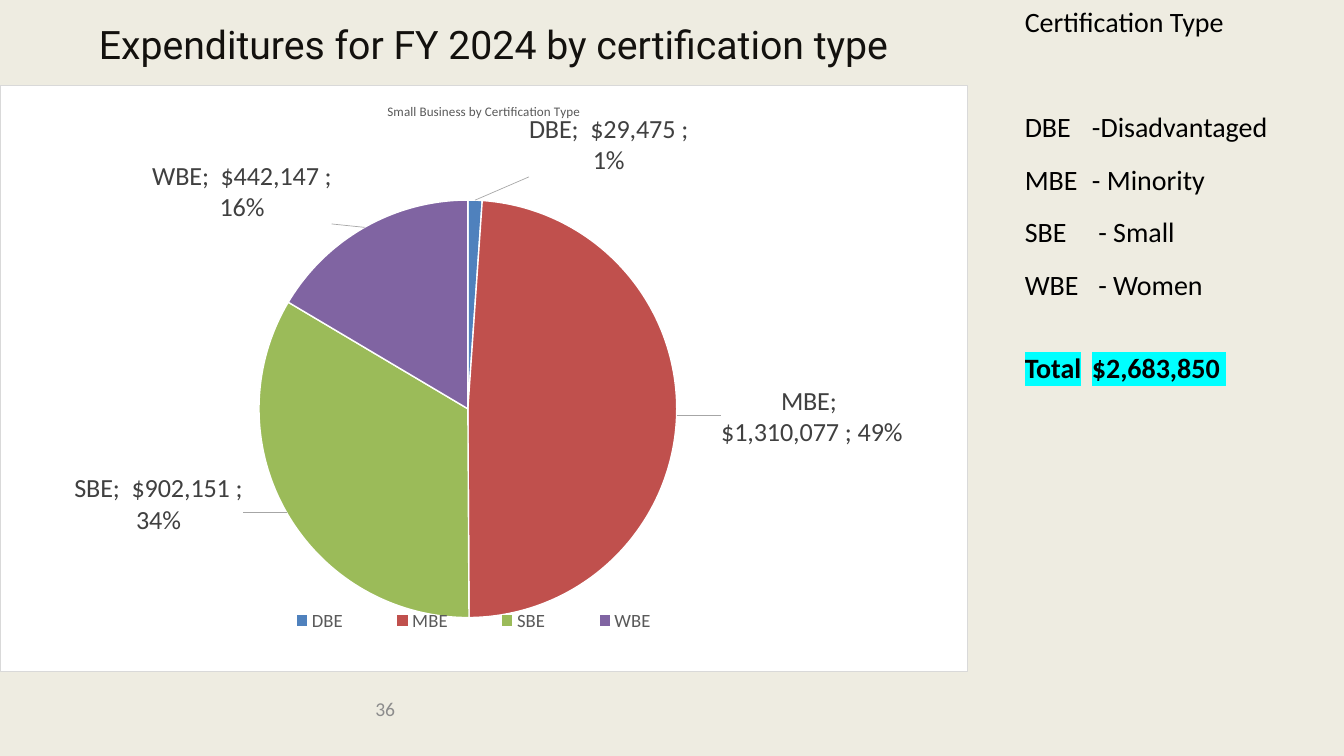
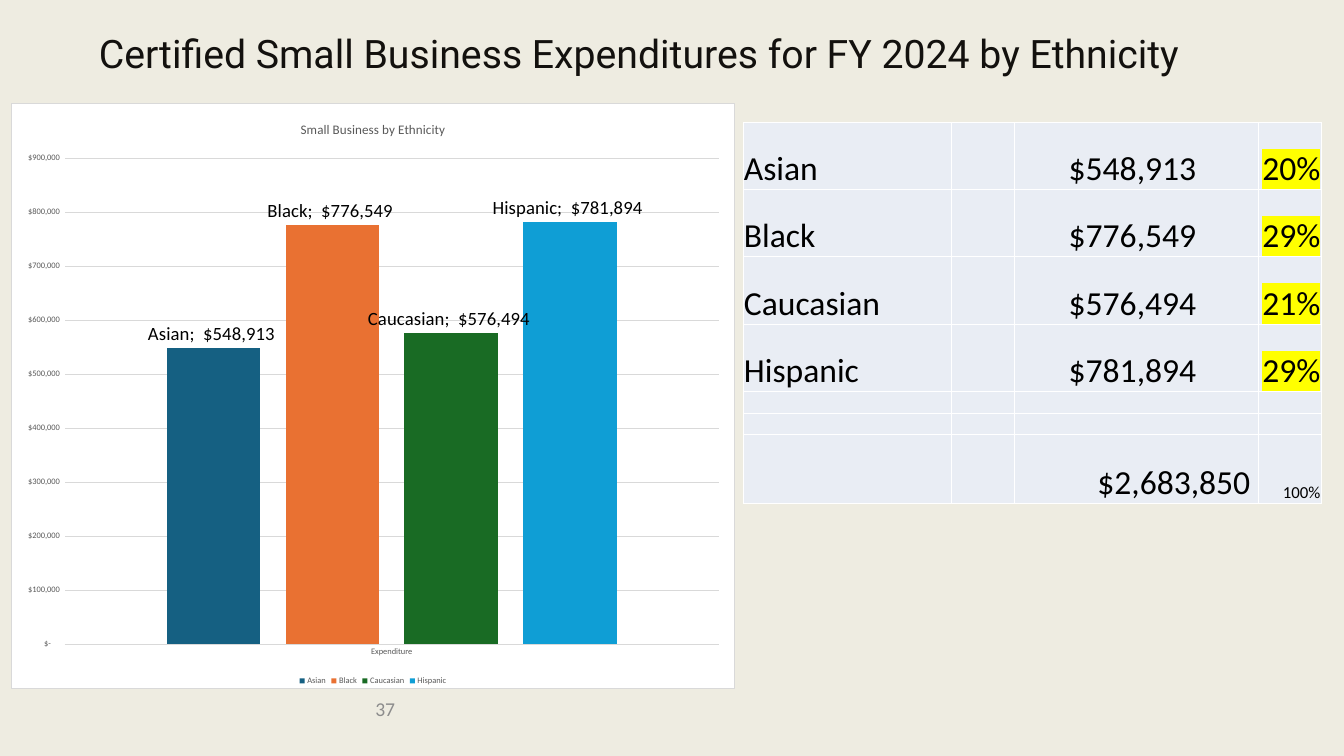
import copy
from typing import Any, NamedTuple, Optional

import pptx
import pptx.chart.data
import pptx.dml.color
import pptx.enum.chart
import pptx.enum.text
import pptx.oxml.ns
import pptx.util
from lxml import etree

WIDE, HIGH = pptx.util.Inches(20), pptx.util.Inches(11.25)
CREAM, WHITE, BLACK, INK = "EEECE1", "FFFFFF", "000000", "13110E"
GREY, PALE, DARK, MUTED, LEAD = "595959", "D9D9D9", "404040", "8C8C8C", "A6A6A6"
CELL, AQUA, YELLOW = "E9EDF4", "00FFFF", "FFFF00"
BODY, HEAD = "Calibri", "Roboto"
MONEY = '_("$"* #,##0_);_("$"* \\(#,##0\\);_("$"* "-"??_);_(@_)'

ALIGN = pptx.enum.text.PP_ALIGN
ANCHOR = pptx.enum.text.MSO_ANCHOR
KIND = pptx.enum.chart.XL_CHART_TYPE
LABEL = pptx.enum.chart.XL_LABEL_POSITION
qn = pptx.oxml.ns.qn


class Box(NamedTuple):
    """Left, top, width and height in percent of the slide or chart."""
    left: float
    top: float
    wide: float
    high: float

    def emu(self) -> tuple[int, int, int, int]:
        return (across(self.left), down(self.top),
                across(self.wide), down(self.high))


class Part(NamedTuple):
    """One value of a chart; dx and dy move its label, in percent of the chart."""
    name: str
    value: int
    color: str
    dx: float = 0
    dy: float = 0


class Entry(NamedTuple):
    """The text of one table cell."""
    text: str
    align: Any = ALIGN.LEFT
    mark: Optional[str] = None
    size: float = 36


class Line(NamedTuple):
    """One line of the key, with the space before it in points."""
    text: str
    before: float = 15
    mark: Optional[str] = None


TYPES = [
    Part("DBE", 29475, "4F81BD", 13.8, -3.3),
    Part("MBE", 1310077, "C0504D", 4.2, 0.3),
    Part("SBE", 902151, "9BBB59", -4.2, -7),
    Part("WBE", 442147, "8064A2", -3.2, 0),
]
GROUPS = [
    Part("Asian", 548913, "156082"),
    Part("Black", 776549, "E97132"),
    Part("Caucasian", 576494, "196B24"),
    Part("Hispanic", 781894, "0F9ED5"),
]
KEY = [
    Line("Certification Type"),
    Line("DBE\t-Disadvantaged", 71.4),
    Line("MBE\t- Minority"),
    Line("SBE\t - Small"),
    Line("WBE\t - Women"),
    Line("Total\t$2,683,850 ", 47.4, AQUA),
]
COLS = [15.5, 4.65, 18.2, 4.65]
ROWS = [8.9, 8.9, 8.9, 8.95, 2.75, 2.75, 9.15]


def across(share: float) -> int:
    return round(WIDE * share / 100)


def down(share: float) -> int:
    return round(HIGH * share / 100)


def paint(text: str) -> pptx.dml.color.RGBColor:
    return pptx.dml.color.RGBColor.from_string(text)


def style(font: Any, size: float, color: str, face: str = BODY,
          bold: bool = False) -> None:
    font.size, font.name, font.bold = pptx.util.Pt(size), face, bold
    font.color.rgb = paint(color)


def add_fill(node: Any, color: str) -> None:
    fill = etree.SubElement(node, qn("a:solidFill"))
    etree.SubElement(fill, qn("a:srgbClr"), val=color)


def edge(tag: str, points: float, color: str) -> Any:
    """Make the XML of a line."""
    line = etree.Element(qn(tag), w=str(pptx.util.Pt(points)))
    add_fill(line, color)
    return line


def mark(run: Any, color: str) -> None:
    """Highlight a run whose font colour is set."""
    light = etree.Element(qn("a:highlight"))
    etree.SubElement(light, qn("a:srgbClr"), val=color)
    run._r.rPr.find(qn("a:solidFill")).addnext(light)


def bare(frame: Any, anchor: Any) -> None:
    """Take the margins off a text frame."""
    frame.margin_left = frame.margin_right = 0
    frame.margin_top = frame.margin_bottom = 0
    frame.word_wrap, frame.vertical_anchor = True, anchor
    frame.auto_size = pptx.enum.text.MSO_AUTO_SIZE.NONE


def start(deck: Any, title: str, high: float, number: int) -> Any:
    """Add a slide with its title and number."""
    slide = deck.slides.add_slide(deck.slide_layouts[5])
    head = slide.shapes.title
    head.left, head.top, head.width, head.height = Box(
        7.35, 1.07, 85.35, high).emu()
    frame = head.text_frame
    frame.text = title
    bare(frame, ANCHOR.BOTTOM)
    frame.paragraphs[0].alignment = ALIGN.LEFT
    style(frame.paragraphs[0].runs[0].font, 42, INK, HEAD)

    foot = slide.shapes.add_textbox(*Box(7.5, 91.11, 21.9, 5.33).emu())
    foot.text_frame.text = str(number)
    bare(foot.text_frame, ANCHOR.MIDDLE)
    line = foot.text_frame.paragraphs[0]
    line.alignment = ALIGN.RIGHT
    style(line.runs[0].font, 21, MUTED)
    return slide


def layout(node: Any, index: int, inner: bool = False, **shares: float) -> None:
    """Give a chart element a manual layout in percent, as its child at index."""
    old = node.find(qn("c:layout"))
    if old is not None:
        node.remove(old)
    outer = etree.Element(qn("c:layout"))
    manual = etree.SubElement(outer, qn("c:manualLayout"))
    if inner:
        etree.SubElement(manual, qn("c:layoutTarget"), val="inner")
    if "w" in shares:
        for mode in ("xMode", "yMode"):
            etree.SubElement(manual, qn("c:" + mode), val="edge")
    for name, share in shares.items():
        etree.SubElement(manual, qn("c:" + name), val=f"{share / 100:.4f}")
    node.insert(index, outer)


def add_chart(slide: Any, kind: Any, box: Box, data: Any, title: str,
              small: float, plot: Box) -> Any:
    """Add a framed chart; plot is in percent of the chart."""
    chart = slide.shapes.add_chart(kind, *box.emu(), data).chart
    style(chart.font, 10, BLACK)
    chart.has_title = True
    chart.chart_title.include_in_layout = False
    frame = chart.chart_title.text_frame
    frame.text = title
    style(frame.paragraphs[0].runs[0].font, 14, GREY)
    chart.has_legend = True
    chart.legend.position = pptx.enum.chart.XL_LEGEND_POSITION.BOTTOM
    chart.legend.include_in_layout = False
    style(chart.legend.font, small, GREY)

    body = chart.element.find(qn("c:chart"))
    layout(body.find(qn("c:plotArea")), 0, True,
           x=plot.left, y=plot.top, w=plot.wide, h=plot.high)
    look = etree.Element(qn("c:spPr"))
    add_fill(look, WHITE)
    look.append(edge("a:ln", 0.75, PALE))
    body.addnext(look)
    return chart


def add_labels(series: Any, size: float, color: str, form: str) -> Any:
    tags = series.data_labels
    style(tags.font, size, color)
    tags.number_format, tags.number_format_is_linked = form, form == "General"
    tags.position, tags.show_value = LABEL.OUTSIDE_END, True
    return tags


def split(chart: Any) -> None:
    """Put a semicolon between the parts of each label."""
    for node in chart.element.iter(qn("c:dLbls")):
        mid = etree.Element(qn("c:separator"))
        mid.text = "; "
        node.find(qn("c:showBubbleSize")).addnext(mid)


def add_pie(slide: Any) -> None:
    data = pptx.chart.data.CategoryChartData(number_format=MONEY)
    data.categories = [part.name for part in TYPES]
    data.add_series("Series 1", [part.value for part in TYPES])
    chart = add_chart(slide, KIND.PIE, Box(0, 11.2, 72, 77.69), data,
                      "Small Business by Certification Type", 20,
                      Box(26.75, 19.6, 43.2, 71.2))
    chart.plots[0].vary_by_categories = True
    series = chart.plots[0].series[0]
    for i, part in enumerate(TYPES):
        form = series.points[i].format
        form.fill.solid()
        form.fill.fore_color.rgb = paint(part.color)
        form.line.color.rgb = paint(WHITE)
        form.line.width = pptx.util.Pt(1.5)
    tags = add_labels(series, 28, DARK, "General")
    tags.show_category_name = tags.show_percentage = True
    split(chart)

    group = next(chart.element.iter(qn("c:dLbls")))
    shared = [node for node in group if node.tag != qn("c:showLeaderLines")]
    for i, part in enumerate(TYPES):
        label = etree.Element(qn("c:dLbl"))
        etree.SubElement(label, qn("c:idx"), val=str(i))
        label.extend(copy.deepcopy(shared))
        layout(label, 1, x=part.dx, y=part.dy)
        group.insert(i, label)
    lead = etree.SubElement(group, qn("c:leaderLines"))
    etree.SubElement(lead, qn("c:spPr")).append(edge("a:ln", 0.75, LEAD))
    layout(next(chart.element.iter(qn("c:legend"))), 1,
           x=25.7, y=87.8, w=46.5, h=7)


def add_bars(slide: Any) -> None:
    data = pptx.chart.data.CategoryChartData(number_format=MONEY)
    data.categories = ["Expenditure"]
    for part in GROUPS:
        data.add_series(part.name, [part.value])
    chart = add_chart(slide, KIND.COLUMN_CLUSTERED,
                      Box(0.85, 13.6, 53.8, 77.51), data,
                      "Small Business by Ethnicity", 9,
                      Box(7.3, 9.4, 90.6, 83))
    plot = chart.plots[0]
    plot.gap_width, plot.overlap, plot.vary_by_categories = 219, -27, False
    for series, part in zip(plot.series, GROUPS):
        series.format.fill.solid()
        series.format.fill.fore_color.rgb = paint(part.color)
        add_labels(series, 20, BLACK, MONEY).show_series_name = True
    split(chart)

    for axis in (chart.category_axis, chart.value_axis):
        axis.major_tick_mark = pptx.enum.chart.XL_TICK_MARK.NONE
        style(axis.tick_labels.font, 9, GREY)
    scale = chart.value_axis
    scale.minimum_scale, scale.maximum_scale, scale.major_unit = 0, 900000, 100000
    scale.tick_labels.number_format = MONEY
    scale.tick_labels.number_format_is_linked = False
    scale.format.line.fill.background()
    for line in (chart.category_axis.format.line,
                 scale.major_gridlines.format.line):
        line.color.rgb, line.width = paint(PALE), pptx.util.Pt(0.75)


def add_key(slide: Any) -> None:
    frame = slide.shapes.add_textbox(*Box(76.25, 1.07, 23.15, 84.09).emu()).text_frame
    frame.text = "\n".join(line.text for line in KEY)
    bare(frame, ANCHOR.TOP)
    for para, line in zip(frame.paragraphs, KEY):
        para.line_spacing = 0.9
        para.space_before = pptx.util.Pt(line.before)
        para.space_after = pptx.util.Pt(9)
        for run in para.runs:
            style(run.font, 30, BLACK, bold=line.mark is not None)
            if line.mark:
                mark(run, line.mark)


def fill_cell(cell: Any, entry: Optional[Entry]) -> None:
    cell.margin_left = cell.margin_right = cell.margin_top = pptx.util.Inches(0.01)
    cell.margin_bottom = 0
    cell.vertical_anchor = ANCHOR.BOTTOM
    cell.fill.solid()
    cell.fill.fore_color.rgb = paint(CELL)
    for i, side in enumerate("LRTB"):
        cell._tc.tcPr.insert(i, edge("a:ln" + side, 1, WHITE))
    if entry:
        cell.text_frame.text = entry.text
        para = cell.text_frame.paragraphs[0]
        para.alignment = entry.align
        style(para.runs[0].font, entry.size, BLACK)
        if entry.mark:
            mark(para.runs[0], entry.mark)


def add_sums(slide: Any) -> None:
    """Add the table of sums and shares by group."""
    total = sum(part.value for part in GROUPS)
    cells = {(len(ROWS) - 1, 2): Entry(f"${total:,} ", ALIGN.RIGHT),
             (len(ROWS) - 1, 3): Entry("100%", ALIGN.RIGHT, size=18)}
    for row, part in enumerate(GROUPS):
        cells[row, 0] = Entry(part.name)
        cells[row, 2] = Entry(f"${part.value:,} ", ALIGN.CENTER)
        cells[row, 3] = Entry(f"{part.value / total:.0%}", ALIGN.RIGHT, YELLOW)
    table = slide.shapes.add_table(
        len(ROWS), len(COLS), *Box(55.3, 16.18, sum(COLS), sum(ROWS)).emu()).table
    table.first_row = table.horz_banding = False
    for col, share in zip(table.columns, COLS):
        col.width = across(share)
    for row, share in enumerate(ROWS):
        table.rows[row].height = down(share)
        for col in range(len(COLS)):
            fill_cell(table.cell(row, col), cells.get((row, col)))


def main() -> None:
    deck = pptx.Presentation()
    deck.slide_width, deck.slide_height = WIDE, HIGH
    back = deck.slide_master.background.fill
    back.solid()
    back.fore_color.rgb = paint(CREAM)

    slide = start(deck, "Expenditures for FY 2024 by certification type", 7.82, 36)
    add_key(slide)
    add_pie(slide)
    slide = start(
        deck, "Certified Small Business Expenditures for FY 2024 by Ethnicity", 8.98, 37)
    add_bars(slide)
    add_sums(slide)
    deck.save("out.pptx")


if __name__ == "__main__":
    main()
